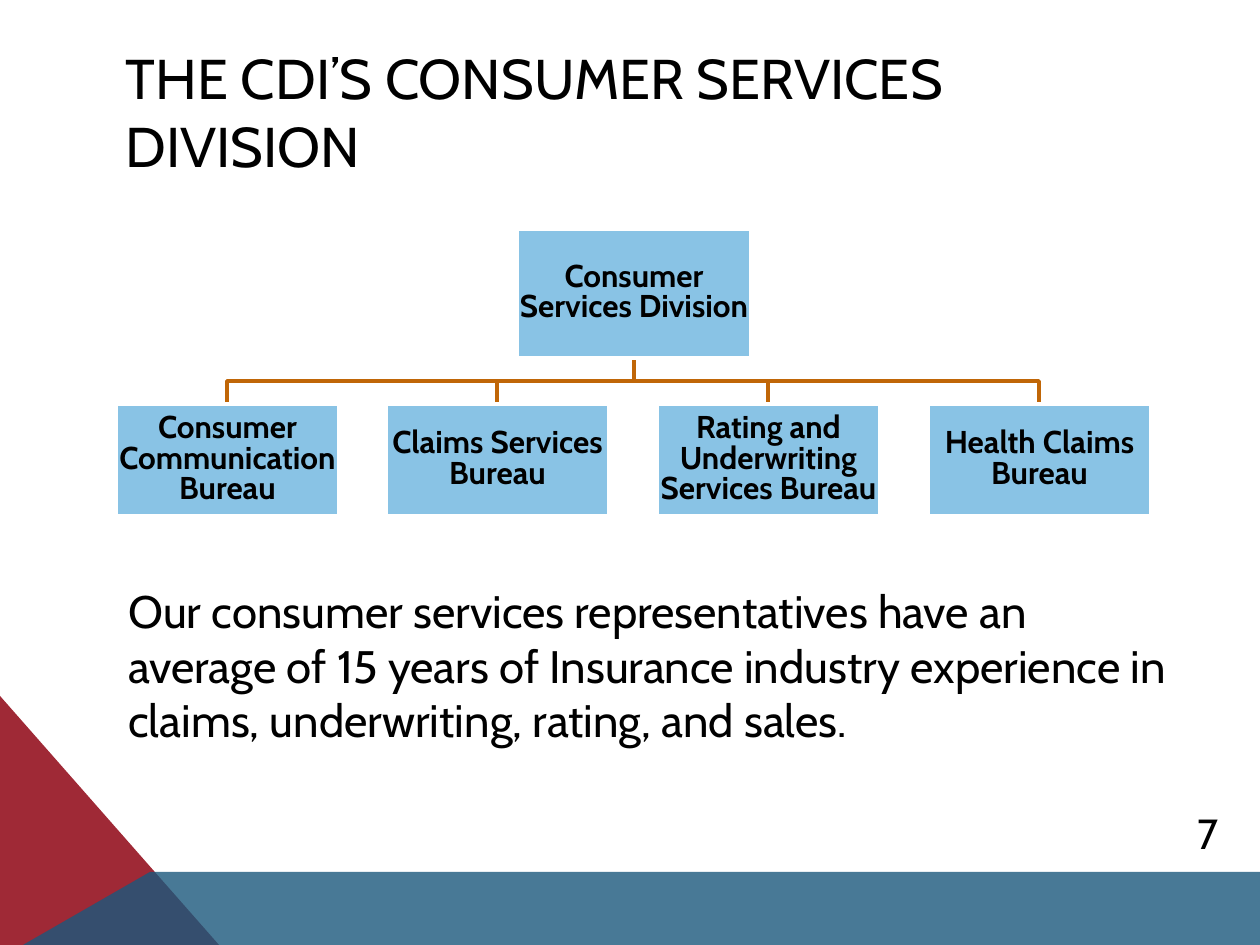
from dataclasses import dataclass

from lxml.etree import SubElement
from pptx import Presentation
from pptx.dml.color import RGBColor
from pptx.enum.shapes import MSO_SHAPE
from pptx.enum.text import MSO_ANCHOR, MSO_AUTO_SIZE, PP_ALIGN
from pptx.oxml.ns import qn
from pptx.util import Emu, Pt

EMU_PER_PX = 914400 / 126
FONT = "Cabin"
BLACK = RGBColor(0x00, 0x00, 0x00)
WHITE = RGBColor(0xFF, 0xFF, 0xFF)
RED = RGBColor(0x9F, 0x29, 0x36)
NAVY = RGBColor(0x1B, 0x58, 0x7C)
SKY = RGBColor(0x89, 0xC3, 0xE5)
ORANGE = RGBColor(0xC0, 0x66, 0x07)


@dataclass(frozen=True)
class Box:
    left: int
    top: int
    width: int
    height: int

    @property
    def center(self) -> int:
        return self.left + self.width // 2

    @property
    def bottom(self) -> int:
        return self.top + self.height

    def emu(self) -> list[Emu]:
        return [px(n) for n in (self.left, self.top, self.width, self.height)]


@dataclass(frozen=True)
class Unit:
    name: str
    box: Box


def px(length: int) -> Emu:
    return Emu(round(length * EMU_PER_PX))


def write(shape, text: str, size: int, align=PP_ALIGN.LEFT, anchor=MSO_ANCHOR.MIDDLE,
          inset: int | None = None, bold: bool = False, spacing: float = 1.0) -> None:
    frame = shape.text_frame
    frame.text = text
    frame.word_wrap = True
    frame.auto_size = MSO_AUTO_SIZE.NONE
    frame.vertical_anchor = anchor
    if inset is not None:
        frame.margin_left = frame.margin_right = px(inset)
        frame.margin_top = frame.margin_bottom = px(inset)
    paragraph = frame.paragraphs[0]
    paragraph.alignment = align
    paragraph.line_spacing = spacing
    font = paragraph.font
    font.name, font.size, font.bold = FONT, Pt(size), bold
    font.color.rgb = BLACK


def add_path(slide, points: list[tuple[int, int]], closed: bool):
    builder = slide.shapes.build_freeform(*points[0], scale=EMU_PER_PX)
    builder.add_line_segments(points[1:], close=closed)
    shape = builder.convert_to_shape()
    shape.shadow.inherit = False
    return shape


def add_area(slide, points: list[tuple[int, int]], color: RGBColor, opacity: int = 100) -> None:
    shape = add_path(slide, points, closed=True)
    shape.fill.solid()
    shape.fill.fore_color.rgb = color
    shape.line.fill.background()
    if opacity < 100:
        color_element = shape.fill._xPr.find(qn("a:solidFill"))[0]
        SubElement(color_element, qn("a:alpha"), val=str(opacity * 1000))


def add_branch(slide, parent: Box, child: Box) -> None:
    middle = (parent.bottom + child.top) // 2
    branch = add_path(slide, [(parent.center, parent.bottom), (parent.center, middle),
                              (child.center, middle), (child.center, child.top)], closed=False)
    branch.fill.background()
    branch.line.color.rgb = ORANGE
    branch.line.width = Pt(2)


def add_unit(slide, unit: Unit) -> None:
    shape = slide.shapes.add_shape(MSO_SHAPE.RECTANGLE, *unit.box.emu())
    shape.shadow.inherit = False
    shape.fill.solid()
    shape.fill.fore_color.rgb = SKY
    shape.line.color.rgb = WHITE
    shape.line.width = Pt(2)
    write(shape, unit.name, 18, PP_ALIGN.CENTER, inset=1, bold=True, spacing=0.8)


DIVISION = Unit("Consumer Services Division", Box(517, 229, 234, 129))
BUREAU_NAMES = [
    "Consumer Communication Bureau",
    "Claims Services Bureau",
    "Rating and Underwriting Services Bureau",
    "Health Claims Bureau",
]
BUREAUS = [Unit(name, Box(116 + 812 * i // 3, 404, 223, 112))
           for i, name in enumerate(BUREAU_NAMES)]


def main() -> None:
    presentation = Presentation()
    presentation.slide_width, presentation.slide_height = px(1260), px(945)
    slide = presentation.slides.add_slide(presentation.slide_layouts[5])

    # Corner decoration
    add_area(slide, [(0, 696), (219, 945), (0, 945)], RED)
    add_area(slide, [(23, 945), (150, 872), (1260, 872), (1260, 945)], NAVY, opacity=80)

    # Title
    title = slide.shapes.title
    title.left, title.top, title.width, title.height = Box(113, 73, 1084, 76).emu()
    write(title, "THE CDI’S CONSUMER SERVICES DIVISION", 32)

    # Organization chart
    for bureau in BUREAUS:
        add_branch(slide, DIVISION.box, bureau.box)
    for unit in [DIVISION, *BUREAUS]:
        add_unit(slide, unit)

    # Statement below the chart
    statement = slide.shapes.add_textbox(*Box(116, 577, 1081, 220).emu())
    write(statement, "Our consumer services representatives have an average of 15 years of "
          "Insurance industry experience in claims, underwriting, rating, and sales.",
          26, anchor=MSO_ANCHOR.TOP)

    # Page number
    number = slide.shapes.add_shape(MSO_SHAPE.OVAL, *Box(1166, 798, 84, 69).emu())
    number.shadow.inherit = False
    number.fill.background()
    number.line.fill.background()
    write(number, "7", 24, PP_ALIGN.CENTER, inset=1)

    presentation.save("out.pptx")


if __name__ == "__main__":
    main()
